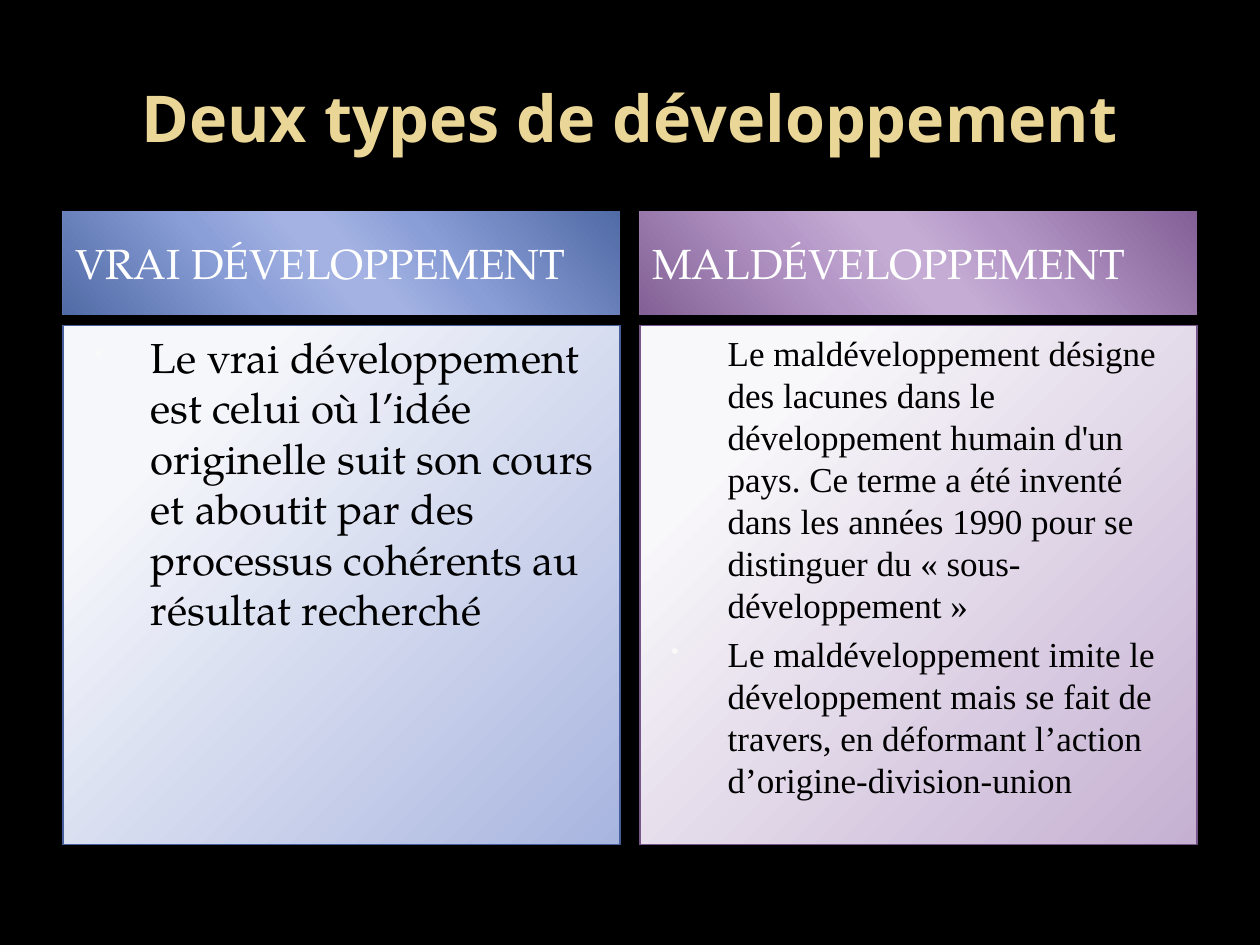
from lxml import etree
from pptx import Presentation
from pptx.dml.color import RGBColor
from pptx.enum.shapes import MSO_SHAPE
from pptx.enum.text import MSO_ANCHOR, PP_ALIGN
from pptx.oxml.ns import qn
from pptx.util import Cm, Pt

RECTANGLE = MSO_SHAPE.RECTANGLE
MIDDLE, TOP = MSO_ANCHOR.MIDDLE, MSO_ANCHOR.TOP
LEFT, CENTER = PP_ALIGN.LEFT, PP_ALIGN.CENTER

COLORS = {
    "background": "000000", "title": "EAD696", "heading": "FFFFFF",
    "body": "000000", "bullet": "F9F9F9",
}
TITLE_FONT, SERIF_FONT, BODY_FONT = "Noto Sans", "TeX Gyre Pagella", "Times New Roman"

TITLE = "Deux types de développement"
COLUMNS = [
    {
        "heading": "VRAI DÉVELOPPEMENT",
        "points": ["Le vrai développement est celui où l’idée originelle suit son cours "
                   "et aboutit par des processus cohérents au résultat recherché"],
        "font": SERIF_FONT, "size": 24,
        "band": ["516BA6", "899DD6", "A3B2E2", "A3B2E2", "8A9ED7", "516BA6"],
        "panel": ["F6F7FB", "A8B5DF"], "border": "465F9A",
    },
    {
        "heading": "MALDÉVELOPPEMENT",
        "points": ["Le maldéveloppement désigne des lacunes dans le développement humain "
                   "d'un pays. Ce terme a été inventé dans les années 1990 pour se "
                   "distinguer du « sous-développement »",
                   "Le maldéveloppement imite le développement mais se fait de travers, "
                   "en déformant l’action d’origine-division-union"],
        "font": BODY_FONT, "size": 20,
        "band": ["836196", "B395C6", "C4ACD4", "C4ACD4", "B496C6", "836196"],
        "panel": ["F8F7FA", "C5B0D2"], "border": "77568A",
    },
]
BAND_STOPS, BAND_ANGLE = [0, 33, 47, 53, 68, 100], 139
PANEL_STOPS = [20, 100]

SLIDE_WIDTH, SLIDE_HEIGHT = 25.4, 19.05
MARGIN, GAP = 1.27, 0.4
COLUMN_WIDTH = (SLIDE_WIDTH - 2 * MARGIN - GAP) / 2
TITLE_TOP, TITLE_HEIGHT = 0.76, 3.18
BAND_TOP, BAND_HEIGHT = 4.26, 2.09
PANEL_TOP, PANEL_HEIGHT = 6.56, 10.46
INDENT, HANGING = 1.52, -1.14


def add_child(parent, tag, **attributes):
    child = etree.SubElement(parent, qn(tag))
    for name, value in attributes.items():
        child.set(name, str(value))
    return child


def fill_gradient(shape, stops, colors, angle=None):
    """Linear at the given angle, or circular from the top left corner without one."""
    shape.fill.gradient()
    gradient = shape.fill._xPr.find(qn("a:gradFill"))
    for child in list(gradient):
        gradient.remove(child)
    stop_list = add_child(gradient, "a:gsLst")
    for position, color in zip(stops, colors):
        stop = add_child(stop_list, "a:gs", pos=position * 1000)
        add_child(stop, "a:srgbClr", val=color)
    if angle is None:
        circle = add_child(gradient, "a:path", path="circle")
        add_child(circle, "a:fillToRect", l=-15000, t=-15000, r=115000, b=115000)
    else:
        add_child(gradient, "a:lin", ang=angle * 60000, scaled=0)


def add_bullet(paragraph):
    properties = paragraph._p.get_or_add_pPr()
    properties.set("marL", str(Cm(INDENT)))
    properties.set("indent", str(Cm(HANGING)))
    add_child(add_child(properties, "a:buClr"), "a:srgbClr", val=COLORS["bullet"])
    add_child(properties, "a:buSzPct", val=65000)
    add_child(properties, "a:buChar", char="•")


def write_text(shape, lines, *, font, size, color, bold=False, align=LEFT,
               anchor=MIDDLE, space_before=0.0, bullets=False):
    frame = shape.text_frame
    frame.word_wrap = True
    frame.vertical_anchor = anchor
    for index, line in enumerate(lines):
        paragraph = frame.add_paragraph() if index else frame.paragraphs[0]
        paragraph.alignment = align
        paragraph.space_before = Pt(space_before)
        if bullets:
            add_bullet(paragraph)
        run = paragraph.add_run()
        run.text = line
        run.font.name = font
        run.font.size = Pt(size)
        run.font.bold = bold
        run.font.color.rgb = RGBColor.from_string(color)


def add_box(slide, left, top, width, height, border=None):
    shape = slide.shapes.add_shape(RECTANGLE, Cm(left), Cm(top), Cm(width), Cm(height))
    shape.shadow.inherit = False
    if border:
        shape.line.color.rgb = RGBColor.from_string(border)
        shape.line.width = Pt(0.75)
    else:
        shape.line.fill.background()
    return shape


def add_column(slide, left, column):
    band = add_box(slide, left, BAND_TOP, COLUMN_WIDTH, BAND_HEIGHT)
    fill_gradient(band, BAND_STOPS, column["band"], BAND_ANGLE)
    write_text(band, [column["heading"]], font=SERIF_FONT, size=24,
               color=COLORS["heading"], space_before=4.8)

    panel = add_box(slide, left, PANEL_TOP, COLUMN_WIDTH, PANEL_HEIGHT, column["border"])
    fill_gradient(panel, PANEL_STOPS, column["panel"])
    write_text(panel, column["points"], font=column["font"], size=column["size"],
               color=COLORS["body"], anchor=TOP, space_before=0.2 * column["size"],
               bullets=True)


def main():
    presentation = Presentation()
    presentation.slide_width, presentation.slide_height = Cm(SLIDE_WIDTH), Cm(SLIDE_HEIGHT)
    slide = presentation.slides.add_slide(presentation.slide_layouts[6])
    slide.background.fill.solid()
    slide.background.fill.fore_color.rgb = RGBColor.from_string(COLORS["background"])

    title = slide.shapes.add_textbox(Cm(MARGIN), Cm(TITLE_TOP),
                                     Cm(SLIDE_WIDTH - 2 * MARGIN), Cm(TITLE_HEIGHT))
    write_text(title, [TITLE], font=TITLE_FONT, size=36.9, color=COLORS["title"],
               bold=True, align=CENTER)
    for index, column in enumerate(COLUMNS):
        add_column(slide, MARGIN + index * (COLUMN_WIDTH + GAP), column)
    presentation.save("out.pptx")


if __name__ == "__main__":
    main()
